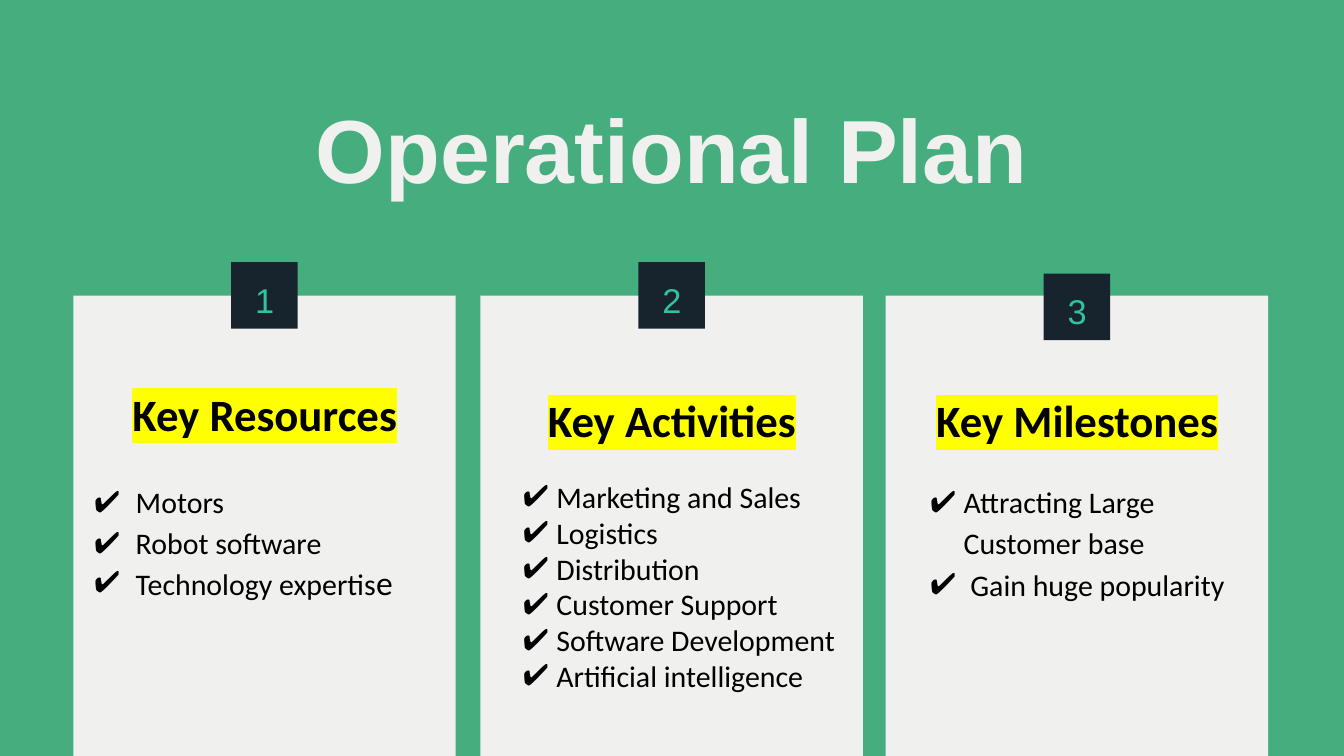
import pptx
import pptx.util
import pptx.dml.color
import pptx.enum.shapes
import pptx.enum.text
import pptx.oxml.ns
import lxml.etree

Inches = pptx.util.Inches
Pt = pptx.util.Pt
ALIGN = pptx.enum.text.PP_ALIGN

GREEN, PAPER, NAVY, TEAL = "45AD7E", "F0F0EE", "17242D", "31C29F"
BLACK, YELLOW = "000000", "FFFF00"
CARD_TOP, CARD_W, CARD_H = 4.4, 5.69, 6.85
BADGE = 0.99

CARDS = [
    dict(left=1.09, badge_top=3.9, heading="Key Resources", heading_top=5.54,
         list_box=(1.4, 7.12, 5.69, 1.58), indent=0.62, align=None,
         items=[("Motors", 1.15), ("Robot software", 1.15),
                ("Technology expertis", 1.03)], large_ending="e"),
    dict(left=7.15, badge_top=3.9, heading="Key Activities", heading_top=5.64,
         list_box=(7.78, 7.12, 4.78, 4.26), indent=0.5, align=ALIGN.JUSTIFY,
         items=[(t, 1.0) for t in (
             "Marketing and Sales", "Logistics", "Distribution",
             "Customer Support", "Software Development",
             "Artificial intelligence")]),
    dict(left=13.18, badge_top=4.07, heading="Key Milestones", heading_top=5.64,
         list_box=(13.84, 7.12, 4.44, 1.56), indent=0.5, align=None,
         items=[("Attracting Large Customer base", 1.15),
                (" Gain huge popularity", 1.15)]),
]


def rgb(color):
    return pptx.dml.color.RGBColor.from_string(color)


def sub(parent, tag, **attrs):
    return lxml.etree.SubElement(parent, pptx.oxml.ns.qn(tag), **attrs)


def style(r, size, font, color, bold=False):
    r.font.size = Pt(size)
    r.font.name = font
    r.font.bold = bold
    r.font.color.rgb = rgb(color)


def add_rect(slide, left, top, width, height, color):
    sp = slide.shapes.add_shape(
        pptx.enum.shapes.MSO_SHAPE.RECTANGLE,
        Inches(left), Inches(top), Inches(width), Inches(height))
    sp.shadow.inherit = False
    sp.fill.solid()
    sp.fill.fore_color.rgb = rgb(color)
    sp.line.fill.background()


def prepare_frame(tf):
    tf.margin_left = tf.margin_top = tf.margin_right = tf.margin_bottom = 0
    tf.word_wrap = True
    tf.auto_size = pptx.enum.text.MSO_AUTO_SIZE.NONE
    tf.vertical_anchor = pptx.enum.text.MSO_ANCHOR.TOP


def add_text(slide, left, top, width, height):
    tf = slide.shapes.add_textbox(
        Inches(left), Inches(top), Inches(width), Inches(height)).text_frame
    prepare_frame(tf)
    return tf


def add_title(slide, left, top, width, height):
    sp = slide.shapes.title
    sp.left, sp.top = Inches(left), Inches(top)
    sp.width, sp.height = Inches(width), Inches(height)
    tf = sp.text_frame
    prepare_frame(tf)
    tf.text = "Operational Plan"
    p = tf.paragraphs[0]
    p.alignment = ALIGN.CENTER
    style(p.runs[0], 96, "Arial", PAPER, True)


def add_badge(slide, left, top, number):
    add_rect(slide, left, top, BADGE, BADGE, NAVY)
    p = add_text(slide, left + 0.16, top + 0.25, 0.68, 0.55).paragraphs[0]
    p.text = str(number)
    p.alignment = ALIGN.CENTER
    style(p.runs[0], 36.8, "Arial", TEAL)


def add_heading(slide, left, top, width, height, text):
    p = add_text(slide, left, top, width, height).paragraphs[0]
    p.text = text
    p.alignment = ALIGN.CENTER
    p.line_spacing = 1.26
    r = p.runs[0]
    style(r, 48, "Calibri", BLACK, True)
    highlight = lxml.etree.Element(pptx.oxml.ns.qn("a:highlight"))
    sub(highlight, "a:srgbClr", val=YELLOW)
    r.font._element.find(pptx.oxml.ns.qn("a:solidFill")).addnext(highlight)


def add_check(p, indent):
    pPr = p._p.get_or_add_pPr()
    pPr.set("marL", str(Inches(indent)))
    pPr.set("indent", str(-Inches(indent)))
    sub(sub(pPr, "a:buClr"), "a:srgbClr", val=BLACK)
    sub(pPr, "a:buFont", typeface="Arial")
    sub(pPr, "a:buChar", char="✔")


def add_checklist(slide, box, items, indent, align):
    tf = add_text(slide, *box)
    for i, (text, spacing) in enumerate(items):
        p = tf.add_paragraph() if i else tf.paragraphs[0]
        p.text = text
        p.alignment = align
        p.line_spacing = spacing
        add_check(p, indent)
        style(p.runs[0], 32, "Calibri", BLACK)
    return tf


def add_card(slide, number, card):
    left = card["left"]
    add_rect(slide, left, CARD_TOP, CARD_W, CARD_H, PAPER)
    add_badge(slide, left + (CARD_W - BADGE) / 2, card["badge_top"], number)
    add_heading(slide, left + 0.63, card["heading_top"], 4.44, 0.81,
                card["heading"])
    tf = add_checklist(slide, card["list_box"], card["items"],
                       card["indent"], card["align"])
    if "large_ending" in card:
        r = tf.paragraphs[-1].add_run()
        r.text = card["large_ending"]
        style(r, 36, "Calibri", BLACK)


def main():
    prs = pptx.Presentation()
    prs.slide_width, prs.slide_height = Inches(20), Inches(11.25)
    slide = prs.slides.add_slide(prs.slide_layouts[5])
    slide.background.fill.solid()
    slide.background.fill.fore_color.rgb = rgb(GREEN)
    add_title(slide, 1.11, 1.39, 17.78, 1.37)
    for number, card in enumerate(CARDS, 1):
        add_card(slide, number, card)
    prs.save("out.pptx")


if __name__ == "__main__":
    main()
